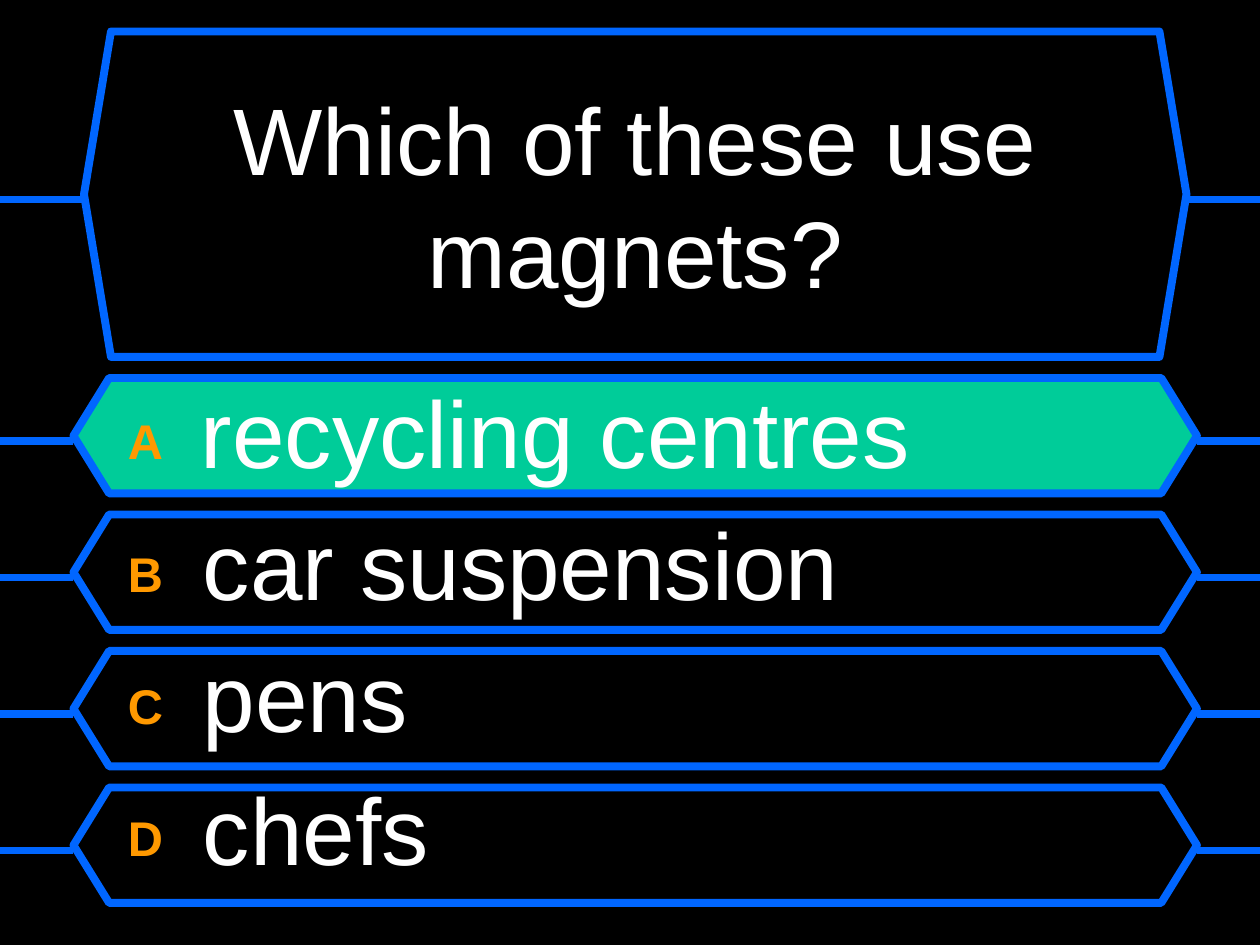
from dataclasses import dataclass

from lxml import etree
from pptx import Presentation
from pptx import util as u
from pptx.dml.color import RGBColor
from pptx.enum import shapes, text
from pptx.oxml.ns import qn

PX = 9525
SLIDE_W, SLIDE_H = 960, 720
BLACK = RGBColor(0x00, 0x00, 0x00)
WHITE = RGBColor(0xFF, 0xFF, 0xFF)
BLUE = RGBColor(0x00, 0x66, 0xFF)
GREEN = RGBColor(0x00, 0xCC, 0x99)
ORANGE = RGBColor(0xFF, 0x99, 0x00)
FONT = "Arial"
BORDER = u.Pt(4.5)
ANSWER_TOP, ANSWER_PITCH = 288, 104
INDENT = 36


@dataclass(frozen=True)
class Panel:
    x: int
    y: int
    w: int
    h: int
    point: float
    wire_y: int
    fill: RGBColor = BLACK


@dataclass(frozen=True)
class Answer:
    letter: str
    words: str
    fill: RGBColor = BLACK


QUESTION = "Which of these use magnets?"
ANSWERS = [
    Answer("A", "recycling centres", GREEN),
    Answer("B", "car suspension"),
    Answer("C", "pens"),
    Answer("D", "chefs"),
]


def px(n: int) -> u.Emu:
    return u.Emu(n * PX)


def add_wire(s, x1: int, x2: int, y: int) -> None:
    line = s.shapes.add_connector(
        shapes.MSO_CONNECTOR.STRAIGHT, px(x1), px(y), px(x2), px(y))
    line.line.color.rgb = BLUE
    line.line.width = BORDER
    etree.SubElement(line._element.spPr, qn("a:effectLst"))


def add_panel(s, panel: Panel) -> None:
    sp = s.shapes.add_shape(
        shapes.MSO_SHAPE.HEXAGON,
        px(panel.x), px(panel.y), px(panel.w), px(panel.h))
    sp.adjustments[0] = panel.point
    sp.shadow.inherit = False
    sp.fill.solid()
    sp.fill.fore_color.rgb = panel.fill
    sp.line.color.rgb = BLUE
    sp.line.width = BORDER
    add_wire(s, panel.x, 0, panel.wire_y)
    add_wire(s, SLIDE_W, panel.x + panel.w, panel.wire_y)


def add_text_frame(s, x: int, y: int, w: int, h: int):
    tf = s.shapes.add_textbox(px(x), px(y), px(w), px(h)).text_frame
    tf.word_wrap = True
    return tf


def add_question(s) -> None:
    tf = add_text_frame(s, 80, 40, 808, 216)
    tf.vertical_anchor = text.MSO_ANCHOR.MIDDLE
    p = tf.paragraphs[0]
    p.text = QUESTION
    p.alignment = text.PP_ALIGN.CENTER
    p.font.name = FONT
    p.font.size = u.Pt(54)
    p.font.color.rgb = WHITE


def add_run(p, words: str, size: int, color: RGBColor, bold: bool):
    r = p.add_run()
    r.text = words
    r.font.name = FONT
    r.font.size = u.Pt(size)
    r.font.color.rgb = color
    r.font.bold = bold
    return r


def add_answers(s) -> None:
    tf = add_text_frame(s, 88, 280, 800, 416)
    for i, answer in enumerate(ANSWERS):
        p = tf.add_paragraph() if i else tf.paragraphs[0]
        pPr = p._p.get_or_add_pPr()
        pPr.set("marL", str(px(INDENT)))
        pPr.set("indent", str(px(-INDENT)))
        before = etree.SubElement(pPr, qn("a:spcBef"))
        etree.SubElement(before, qn("a:spcPct")).set("val", "20000")
        letter = add_run(p, f"{answer.letter} ", 48, ORANGE, True)
        letter.font._element.set("baseline", "10000")
        add_run(p, f" {answer.words}", 54, WHITE, False)


def main() -> None:
    prs = Presentation()
    prs.slide_width, prs.slide_height = px(SLIDE_W), px(SLIDE_H)
    s = prs.slides.add_slide(prs.slide_layouts[6])
    s.background.fill.solid()
    s.background.fill.fore_color.rgb = BLACK

    add_panel(s, Panel(64, 24, 840, 248, 0.083, 152))
    for i, answer in enumerate(ANSWERS):
        y = ANSWER_TOP + i * ANSWER_PITCH
        add_panel(s, Panel(56, y, 856, 88, 0.309, y + 48, answer.fill))
    add_question(s)
    add_answers(s)
    prs.save("out.pptx")


if __name__ == "__main__":
    main()
